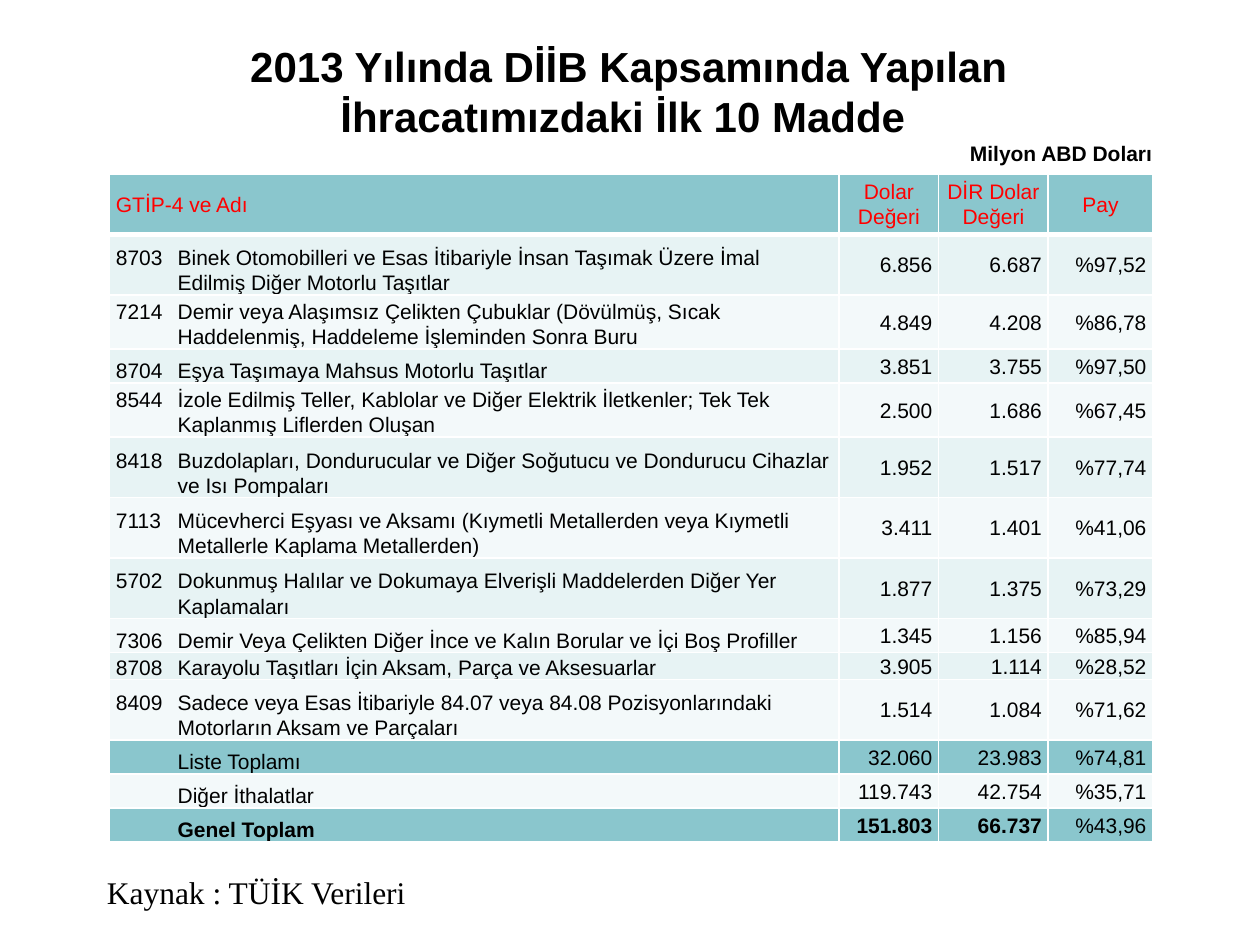
"""Build a slide with a table of the top ten export items of 2013."""
from lxml import etree
from pptx import Presentation
from pptx.dml.color import RGBColor
from pptx.enum.text import MSO_ANCHOR, MSO_AUTO_SIZE, PP_ALIGN
from pptx.oxml.ns import qn
from pptx.util import Inches, Pt

LEFT, MID, RIGHT = PP_ALIGN.LEFT, PP_ALIGN.CENTER, PP_ALIGN.RIGHT
CENTRE, BOTTOM, TOP = MSO_ANCHOR.MIDDLE, MSO_ANCHOR.BOTTOM, MSO_ANCHOR.TOP
GROW, FIXED = MSO_AUTO_SIZE.SHAPE_TO_FIT_TEXT, MSO_AUTO_SIZE.NONE
TEAL, PALE, LIGHT = "8AC6CD", "E7F3F4", "F3F9FA"
BLACK, RED, WHITE = "000000", "FF0000", "FFFFFF"


def style(item, text, look, font, tint):
    """Write a paragraph and give it its look."""
    item.text = text
    for target, values in ((item, look), (item.font, font)):
        for key, value in values.items():
            setattr(target, key, value)
    item.font.color.rgb = RGBColor.from_string(tint)


def edge(cell, side, width):
    """Draw one white border of a cell."""
    line = etree.SubElement(cell._tc.get_or_add_tcPr(), qn("a:ln" + side), w=str(Pt(width)))
    fill = etree.SubElement(line, qn("a:solidFill"))
    etree.SubElement(fill, qn("a:srgbClr"), val=WHITE)


deck = Presentation()
deck.slide_width, deck.slide_height = Inches(10), Inches(7.5)
slide = deck.slides.add_slide(deck.slide_layouts[6])

title = "2013 Yılında DİİB Kapsamında Yapılan\vİhracatımızdaki İlk 10 Madde "
labels = [
    (title, (0.43, 0.28, 9.12, 0.88), MID, "Arial", 24, True,
     {"word_wrap": True, "vertical_anchor": CENTRE, "auto_size": FIXED}),
    ("Kaynak : TÜİK Verileri", (0.75, 6.88, 2.61, 0.6), LEFT, "Times New Roman", 18, False,
     {"word_wrap": False, "vertical_anchor": TOP, "auto_size": GROW}),
    ("Milyon ABD Doları", (7.6, 1.07, 1.66, 0.3), LEFT, "Arial", 12, True,
     {"word_wrap": False, "vertical_anchor": TOP, "auto_size": GROW}),
]
for text, place, align, face, size, bold, frame in labels:
    box = slide.shapes.add_textbox(*map(Inches, place)).text_frame
    for key, value in frame.items():
        setattr(box, key, value)
    style(box.paragraphs[0], text, {"alignment": align},
          {"name": face, "size": Pt(size), "bold": bold}, BLACK)

rows = [
    (0.48, "GTİP-4 ve Adı", "Dolar Değeri", "DİR Dolar Değeri", "Pay"),
    (0.48, "8703\tBinek Otomobilleri ve Esas İtibariyle İnsan Taşımak Üzere İmal Edilmiş Diğer Motorlu Taşıtlar",
     "6.856", "6.687", "%97,52"),
    (0.43, "7214\tDemir veya Alaşımsız Çelikten Çubuklar (Dövülmüş, Sıcak Haddelenmiş, Haddeleme İşleminden Sonra Buru",
     "4.849", "4.208", "%86,78"),
    (0.27, "8704\tEşya Taşımaya Mahsus Motorlu Taşıtlar", "3.851", "3.755", "%97,50"),
    (0.43, "8544\tİzole Edilmiş Teller, Kablolar ve Diğer Elektrik İletkenler; Tek Tek Kaplanmış Liflerden Oluşan",
     "2.500", "1.686", "%67,45"),
    (0.48, "8418\tBuzdolapları, Dondurucular ve Diğer Soğutucu ve Dondurucu Cihazlar ve Isı Pompaları",
     "1.952", "1.517", "%77,74"),
    (0.48, "7113\tMücevherci Eşyası ve Aksamı (Kıymetli Metallerden veya Kıymetli Metallerle Kaplama Metallerden)",
     "3.411", "1.401", "%41,06"),
    (0.48, "5702\tDokunmuş Halılar ve Dokumaya Elverişli Maddelerden Diğer Yer Kaplamaları",
     "1.877", "1.375", "%73,29"),
    (0.27, "7306\tDemir Veya Çelikten Diğer İnce ve Kalın Borular ve İçi Boş Profiller",
     "1.345", "1.156", "%85,94"),
    (0.21, "8708\tKarayolu Taşıtları İçin Aksam, Parça ve Aksesuarlar", "3.905", "1.114", "%28,52"),
    (0.48, "8409\tSadece veya Esas İtibariyle 84.07 veya 84.08 Pozisyonlarındaki Motorların Aksam ve Parçaları",
     "1.514", "1.084", "%71,62"),
    (0.27, "Liste Toplamı", "32.060", "23.983", "%74,81"),
    (0.27, "Diğer İthalatlar", "119.743", "42.754", "%35,71"),
    (0.27, "Genel Toplam", "151.803", "66.737", "%43,96"),
]
widths = [5.79, 0.79, 0.87, 0.83]
last = len(rows) - 1
place = map(Inches, (0.87, 1.38, sum(widths), sum(row[0] for row in rows)))
table = slide.shapes.add_table(len(rows), len(widths), *place).table
table.first_row = table.horz_banding = False
for col, width in zip(table.columns, widths):
    col.width = Inches(width)

for r, (height, *texts) in enumerate(rows):
    table.rows[r].height = Inches(height)
    head = r == 0
    shade = TEAL if r in (0, last - 2, last) else PALE if r % 2 else LIGHT
    for c, text in enumerate(texts):
        cell = table.cell(r, c)
        name = c == 0
        pad = {"margin_left": Inches(0.05), "margin_right": Inches(0.05),
               "margin_top": 0, "margin_bottom": 0,
               "vertical_anchor": BOTTOM if name and not head else CENTRE}
        for key, value in pad.items():
            setattr(cell, key, value)
        for side, width in (("L", 1), ("R", 1), ("T", 3 if r == 1 else 1), ("B", 3 if head else 1)):
            edge(cell, side, width)
        cell.fill.solid()
        cell.fill.fore_color.rgb = RGBColor.from_string(shade)
        item = cell.text_frame.paragraphs[0]
        if name and not head:
            props = item._p.get_or_add_pPr()
            props.set("marL", str(Inches(0.49)))
            props.set("indent", str(Inches(-0.49) if "\t" in text else 0))
        look = {"alignment": LEFT if name else MID if head else RIGHT,
                "line_spacing": 1.07, "space_after": Pt(0 if head else 8)}
        font = {"name": "Arial", "size": Pt(12), "bold": r == last and c < 3}
        style(item, text, look, font, RED if head else BLACK)

deck.save("out.pptx")
